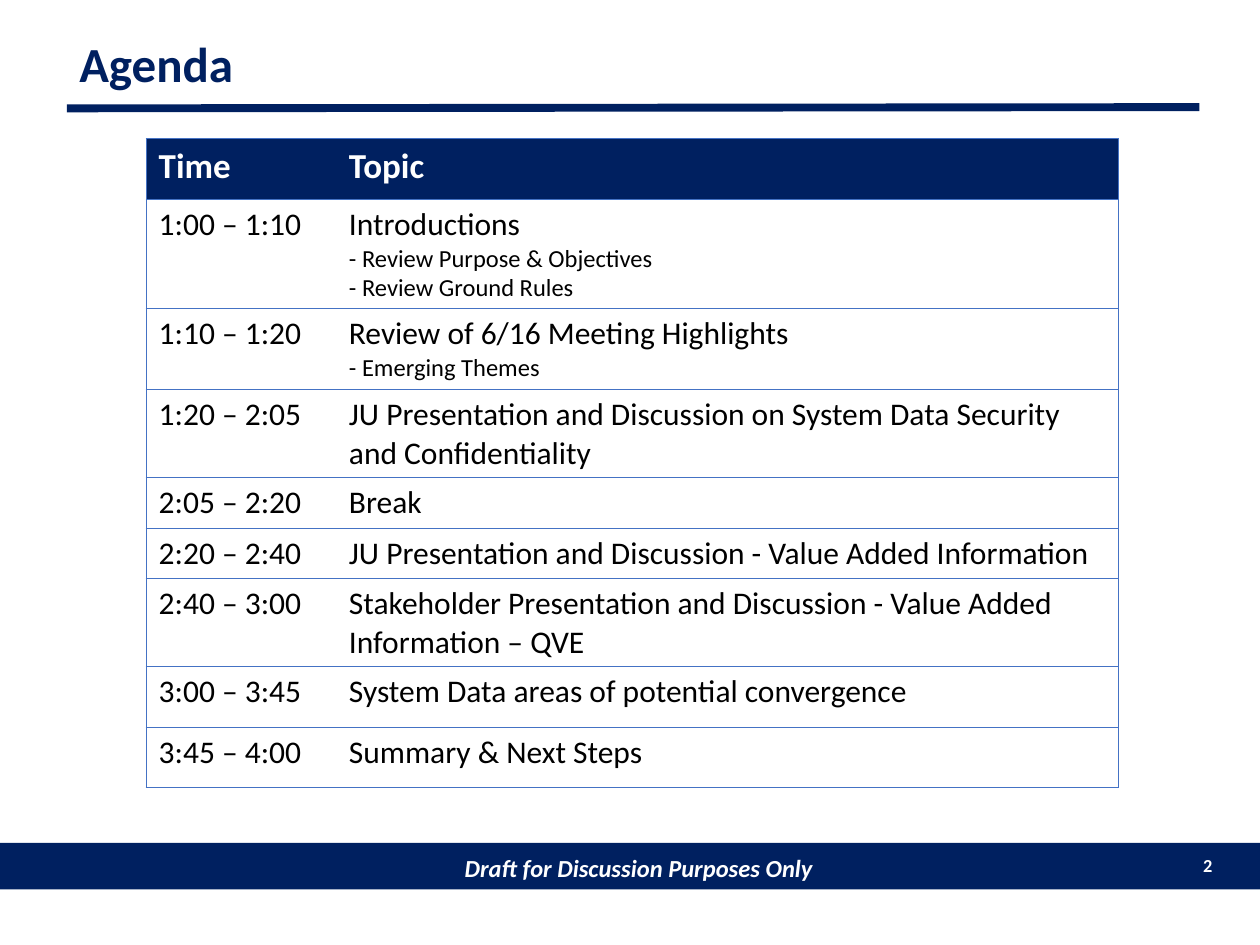
from pptx import Presentation
from pptx.dml.color import RGBColor
from pptx.enum.shapes import MSO_CONNECTOR, MSO_SHAPE
from pptx.enum.text import MSO_ANCHOR, PP_ALIGN
from pptx.oxml import parse_xml
from pptx.oxml.ns import nsdecls
from pptx.util import Inches, Pt

NAVY = RGBColor(0x00, 0x20, 0x60)
BLUE = RGBColor(0x44, 0x72, 0xC4)
WHITE = RGBColor(0xFF, 0xFF, 0xFF)
BLACK = RGBColor(0x00, 0x00, 0x00)

# Each row: height, time, topic, sub-points
AGENDA = [
    (0.87, "1:00 – 1:10", "Introductions",
     ["- Review Purpose & Objectives", "- Review Ground Rules"]),
    (0.64, "1:10 – 1:20", "Review of 6/16 Meeting Highlights",
     ["- Emerging Themes"]),
    (0.7, "1:20 – 2:05", "JU Presentation and Discussion on System Data "
     "Security and Confidentiality", []),
    (0.4, "2:05 – 2:20", "Break", []),
    (0.4, "2:20 – 2:40",
     "JU Presentation and Discussion - Value Added Information", []),
    (0.7, "2:40 – 3:00", "Stakeholder Presentation and Discussion - "
     "Value Added Information – QVE", []),
    (0.48, "3:00 – 3:45", "System Data areas of potential convergence", []),
    (0.48, "3:45 – 4:00", "Summary & Next Steps", []),
]


class Deck:
    font = "Calibri"

    def __init__(self):
        self.prs = Presentation()
        self.prs.slide_width = Inches(10)
        self.prs.slide_height = Inches(7.5)
        self.slide = self.prs.slides.add_slide(self.prs.slide_layouts[5])

    def words(self, para, text, size, color, bold=False, italic=False):
        run = para.add_run()
        run.text = text
        font = run.font
        font.name, font.size = self.font, Pt(size)
        font.bold, font.italic = bold, italic
        font.color.rgb = color

    def title(self, text, *box):
        shape = self.slide.shapes.title
        shape.left, shape.top, shape.width, shape.height = map(Inches, box)
        shape.text_frame.vertical_anchor = MSO_ANCHOR.MIDDLE
        para = shape.text_frame.paragraphs[0]
        para.alignment = PP_ALIGN.LEFT
        para.line_spacing = 0.9
        self.words(para, text, 28, NAVY, bold=True)

    def rule(self, *ends):
        line = self.slide.shapes.add_connector(
            MSO_CONNECTOR.STRAIGHT, *map(Inches, ends))
        line.line.color.rgb = NAVY
        line.line.width = Pt(4.5)
        line._element.spPr.append(
            parse_xml(f"<a:effectLst {nsdecls('a')}/>"))

    def band(self, text, *box):
        shape = self.slide.shapes.add_shape(
            MSO_SHAPE.RECTANGLE, *map(Inches, box))
        shape.shadow.inherit = False
        shape.fill.solid()
        shape.fill.fore_color.rgb = NAVY
        shape.line.fill.background()
        frame = shape.text_frame
        frame.margin_left = Inches(0.24)
        frame.margin_top = Inches(0.07)
        frame.vertical_anchor = MSO_ANCHOR.MIDDLE
        para = frame.paragraphs[0]
        para.alignment = PP_ALIGN.CENTER
        self.words(para, text, 14, WHITE, bold=True, italic=True)

    def number(self, text, *box):
        frame = self.slide.shapes.add_textbox(*map(Inches, box)).text_frame
        frame.word_wrap = True
        para = frame.paragraphs[0]
        para.alignment = PP_ALIGN.RIGHT
        self.words(para, text, 10.5, WHITE, bold=True)

    def edge(self, cell, hidden):
        props = cell._tc.get_or_add_tcPr()
        for side in "LRTB":
            paint = ("<a:noFill/>" if side == hidden else
                     f'<a:solidFill><a:srgbClr val="{BLUE}"/></a:solidFill>')
            props.append(parse_xml(
                f'<a:ln{side} {nsdecls("a")} w="{Pt(0.5)}">{paint}'
                f"</a:ln{side}>"))

    def table(self, heads, rows, left, top, cols, head):
        high = [head] + [row[0] for row in rows]
        grid = self.slide.shapes.add_table(
            len(high), len(cols), Inches(left), Inches(top),
            Inches(sum(cols)), Inches(sum(high))).table
        grid.horz_banding = False
        for col, width in zip(grid.columns, cols):
            col.width = Inches(width)

        # Outer frame and row lines, with no line between the columns
        for row, height in zip(grid.rows, high):
            row.height = Inches(height)
            for cell, hidden in zip(row.cells, "RL"):
                self.edge(cell, hidden)
                cell.fill.background()

        # Header
        for cell, text in zip(grid.rows[0].cells, heads):
            cell.fill.solid()
            cell.fill.fore_color.rgb = NAVY
            self.words(cell.text_frame.paragraphs[0], text, 20, WHITE,
                       bold=True)

        # Agenda items
        for num, (_, time, topic, subs) in enumerate(rows, 1):
            for col, text in enumerate((time, topic)):
                para = grid.cell(num, col).text_frame.paragraphs[0]
                self.words(para, text, 18, BLACK)
            for sub in subs:
                para = grid.cell(num, 1).text_frame.add_paragraph()
                self.words(para, sub, 14, BLACK)


def main():
    deck = Deck()
    # Footer
    deck.band("Draft for Discussion Purposes Only", 0, 6.69, 10, 0.37)
    deck.number("2", 9.31, 6.73, 0.41, 0.29)
    # Heading
    deck.rule(0.53, 0.86, 9.52, 0.85)
    deck.title("Agenda", 0.53, 0.25, 8.99, 0.55)
    # Schedule
    deck.table(("Time", "Topic"), AGENDA, 1.16, 1.1, (1.51, 6.21), 0.48)
    deck.prs.save("out.pptx")


if __name__ == "__main__":
    main()
